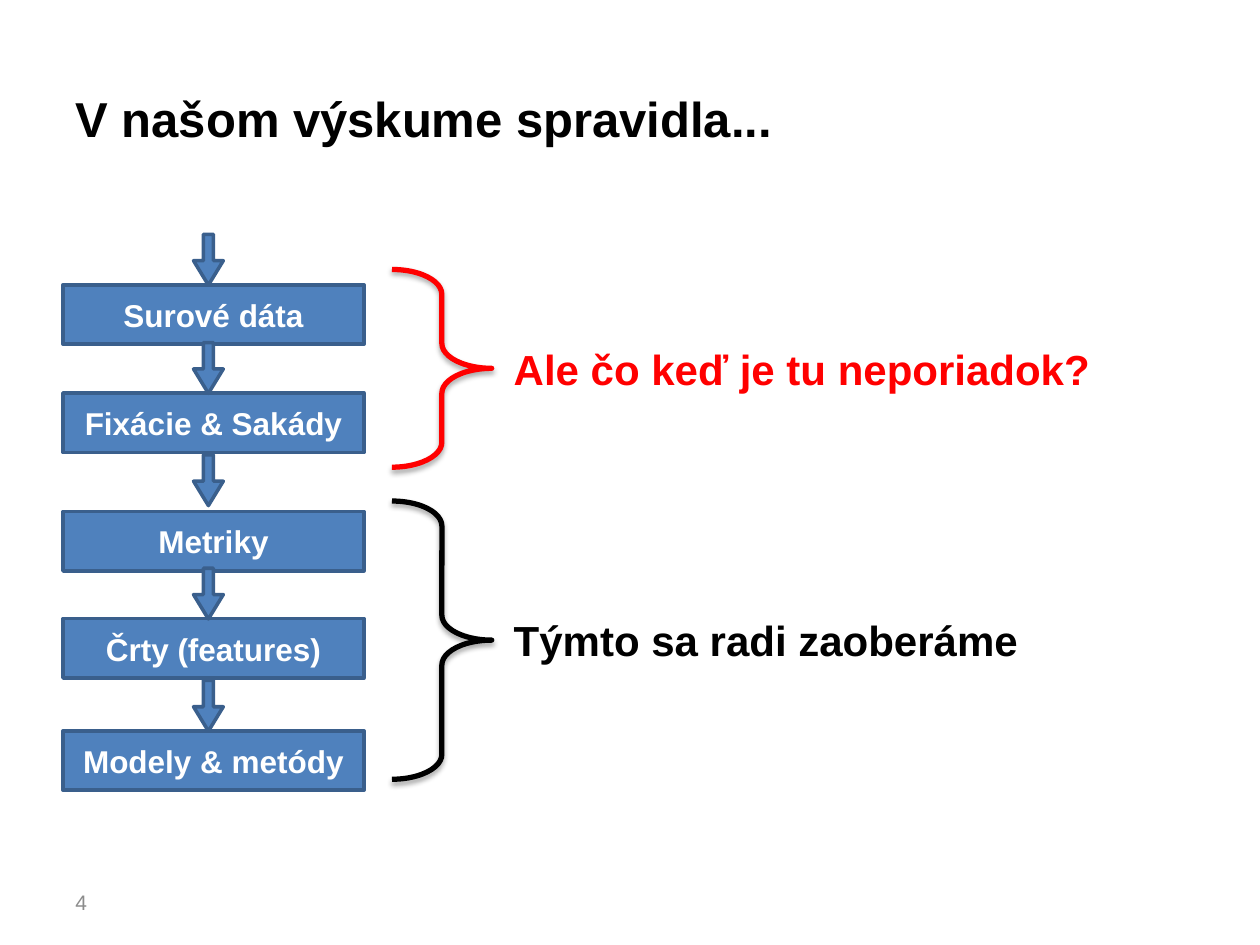
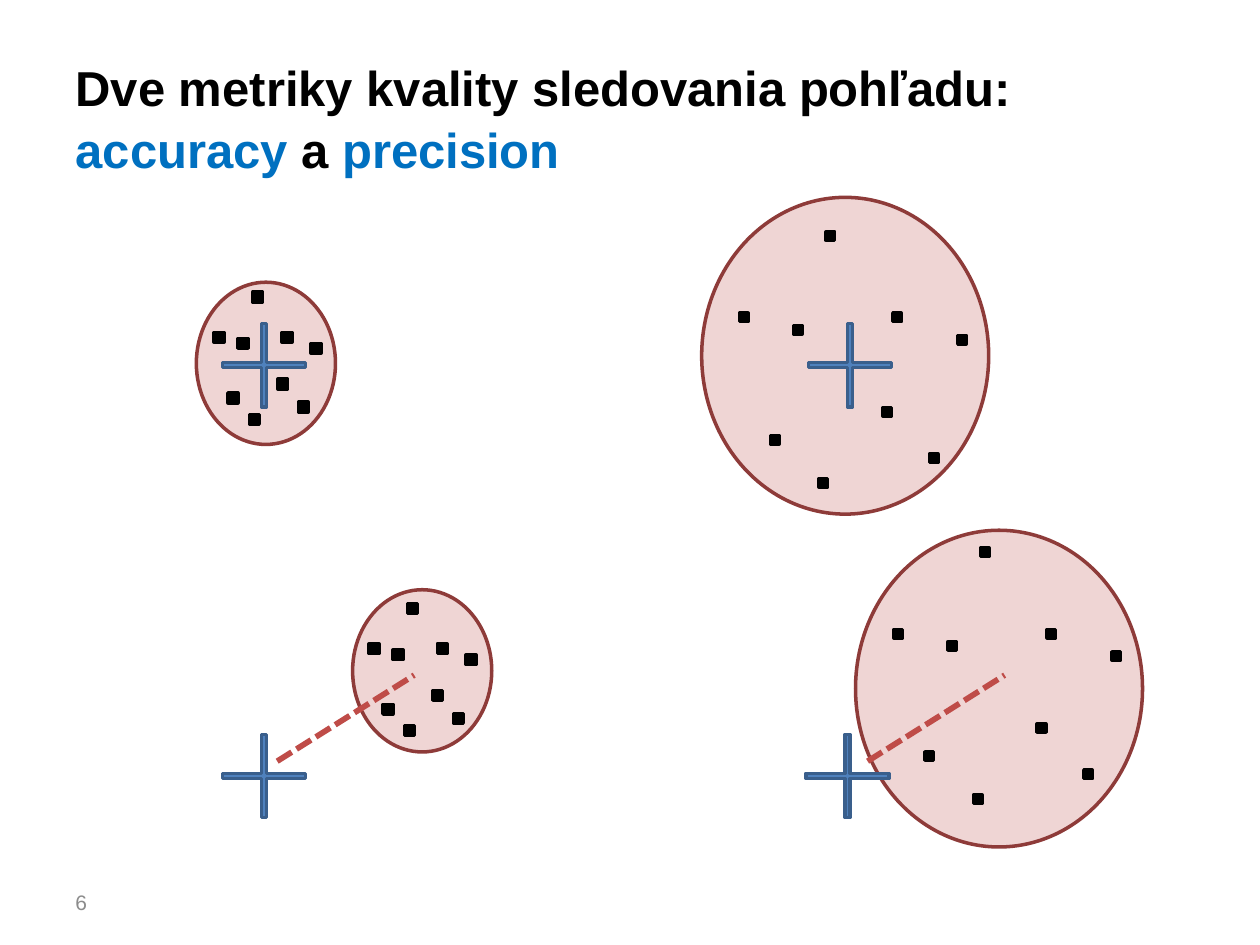
from lxml.etree import SubElement
from pptx import Presentation
from pptx.dml.color import RGBColor
from pptx.enum.dml import MSO_LINE
from pptx.enum.shapes import MSO_CONNECTOR, MSO_SHAPE
from pptx.enum.text import MSO_ANCHOR, PP_ALIGN
from pptx.oxml.ns import qn
from pptx.util import Pt

COLORS = {
    "black": "000000", "white": "FFFFFF", "red": "FF0000", "gray": "8C8C8C",
    "accent": "0070C0", "blue": "4F81BD", "blue edge": "3A5F8C",
    "rose": "C0504D", "rose edge": "8E3B39", "dash": "BF4C48",
}


def add_figure(page, kind, bounds, fill, edge, width=2, adjustments=()):
    figure = page.shapes.add_shape(kind, *[Pt(value) for value in bounds])
    figure.shadow.inherit = False
    for index, value in enumerate(adjustments):
        figure.adjustments[index] = value
    if fill:
        figure.fill.solid()
        figure.fill.fore_color.rgb = RGBColor.from_string(COLORS[fill])
    else:
        figure.fill.background()
    figure.line.color.rgb = RGBColor.from_string(COLORS[edge])
    figure.line.width = Pt(width)
    return figure


def write(frame, spans, size, bold=True, align=PP_ALIGN.LEFT, anchor=MSO_ANCHOR.MIDDLE):
    frame.word_wrap = True
    frame.vertical_anchor = anchor
    para = frame.paragraphs[0]
    para.alignment = align
    for text, color in spans:
        if text == "\n":
            para.add_line_break()
            continue
        span = para.add_run()
        span.text = text
        span.font.name = "Arial"
        span.font.size = Pt(size)
        span.font.bold = bold
        span.font.color.rgb = RGBColor.from_string(COLORS[color])


deck = Presentation()
deck.slide_width, deck.slide_height = Pt(720), Pt(540)

# Titles and page numbers
slides = [
    ("4", [("V našom výskume spravidla...", "black")]),
    ("6", [("Dve metriky kvality sledovania pohľadu:", "black"), ("\n", None),
           ("accuracy", "accent"), (" a ", "black"), ("precision", "accent")]),
]
pages = []
for number, title_spans in slides:
    page = deck.slides.add_slide(deck.slide_layouts[5])
    title = page.shapes.title
    title.left, title.top, title.width, title.height = Pt(36), Pt(21.6), Pt(648), Pt(90)
    write(title.text_frame, title_spans, 28)
    title.text_frame.paragraphs[0].line_spacing = 1.05
    box = page.shapes.add_textbox(Pt(36), Pt(501), Pt(168), Pt(28.8))
    write(box.text_frame, [(number, "gray")], 12, bold=False)
    pages.append(page)
process_page, quality_page = pages

# Processing steps, each with the arrow leading into it
steps = [
    ("Surové dáta", 162.7, 133.9),
    ("Fixácie & Sakády", 224.6, 195.8),
    ("Metriky", 292.3, 259.9),
    ("Črty (features)", 353.5, 324.7),
    ("Modely & metódy", 417.6, 388.8),
]
for label, box_top, arrow_top in steps:
    box = add_figure(process_page, MSO_SHAPE.RECTANGLE, (36, box_top, 172, 34),
                     "blue", "blue edge")
    write(box.text_frame, [(label, "white")], 18, align=PP_ALIGN.CENTER)
    add_figure(process_page, MSO_SHAPE.DOWN_ARROW, (110.6, arrow_top, 17, 29),
               "blue", "blue edge", adjustments=(0.34, 0.82))

# Braces with their remarks
remarks = [
    ("Ale čo keď je tu neporiadok?", "red", 154, 113, 192.5),
    ("Týmto sa radi zaoberáme", "black", 286.3, 159, 347.8),
]
for text, color, top, height, text_top in remarks:
    brace = add_figure(process_page, MSO_SHAPE.RIGHT_BRACE, (224, top, 57, height),
                       None, color, width=3, adjustments=(0.25, 0.5))
    effects = brace.element.spPr.find(qn("a:effectLst"))
    shadow = SubElement(effects, qn("a:outerShdw"), blurRad=str(Pt(3.1)),
                        dist=str(Pt(1.8)), dir="5400000", rotWithShape="0")
    shadow_color = SubElement(shadow, qn("a:srgbClr"), val=COLORS["black"])
    SubElement(shadow_color, qn("a:alpha"), val="35000")
    box = process_page.shapes.add_textbox(Pt(286.5), Pt(text_top), Pt(357), Pt(36))
    write(box.text_frame, [(text, color)], 24, anchor=MSO_ANCHOR.TOP)

# Areas of measured gaze
areas = [
    (488.9, 303, 164, 181), (401, 112.8, 164, 181),
    (201.5, 337, 79.5, 92.7), (112.2, 161.3, 79.5, 92.7),
]
for bounds in areas:
    area = add_figure(quality_page, MSO_SHAPE.OVAL, bounds, "rose", "rose edge")
    area_color = area.element.spPr.find(qn("a:solidFill")).find(qn("a:srgbClr"))
    SubElement(area_color, qn("a:alpha"), val="24000")

# Targets
for left, top in [(127.1, 185), (127.1, 419.7), (462, 185), (460.5, 419.7)]:
    add_figure(quality_page, MSO_SHAPE.CROSS, (left, top, 47.5, 47.5),
               "blue", "blue edge", adjustments=(0.47,))

# Gaze points: one pattern, spread out where precision is low
pattern = [(55.4, 29.3), (38.9, 23), (36.4, 49.7), (13.7, 26.5), (7.9, 57.6),
           (0, 23), (48.2, 62.8), (20.2, 69.8), (22, 0)]
clusters = [
    (122.4, 167, 1, 1, 5.6), (211, 344.9, 1, 1, 5.6),
    (422.6, 132.5, 2.25, 2.02, 4.9), (510.8, 313.2, 2.25, 2.02, 4.9),
]
for left, top, stretch_x, stretch_y, size in clusters:
    for x, y in pattern:
        add_figure(quality_page, MSO_SHAPE.RECTANGLE,
                   (left + x * stretch_x, top + y * stretch_y, size, size),
                   "black", "black")

# Offsets from target to gaze
for left in (158.4, 495.8):
    offset = quality_page.shapes.add_connector(
        MSO_CONNECTOR.STRAIGHT, Pt(left), Pt(435), Pt(left + 78.3), Pt(385.8))
    offset.line.color.rgb = RGBColor.from_string(COLORS["dash"])
    offset.line.width = Pt(3.25)
    offset.line.dash_style = MSO_LINE.SQUARE_DOT
    SubElement(offset.element.spPr, qn("a:effectLst"))

deck.save("out.pptx")
